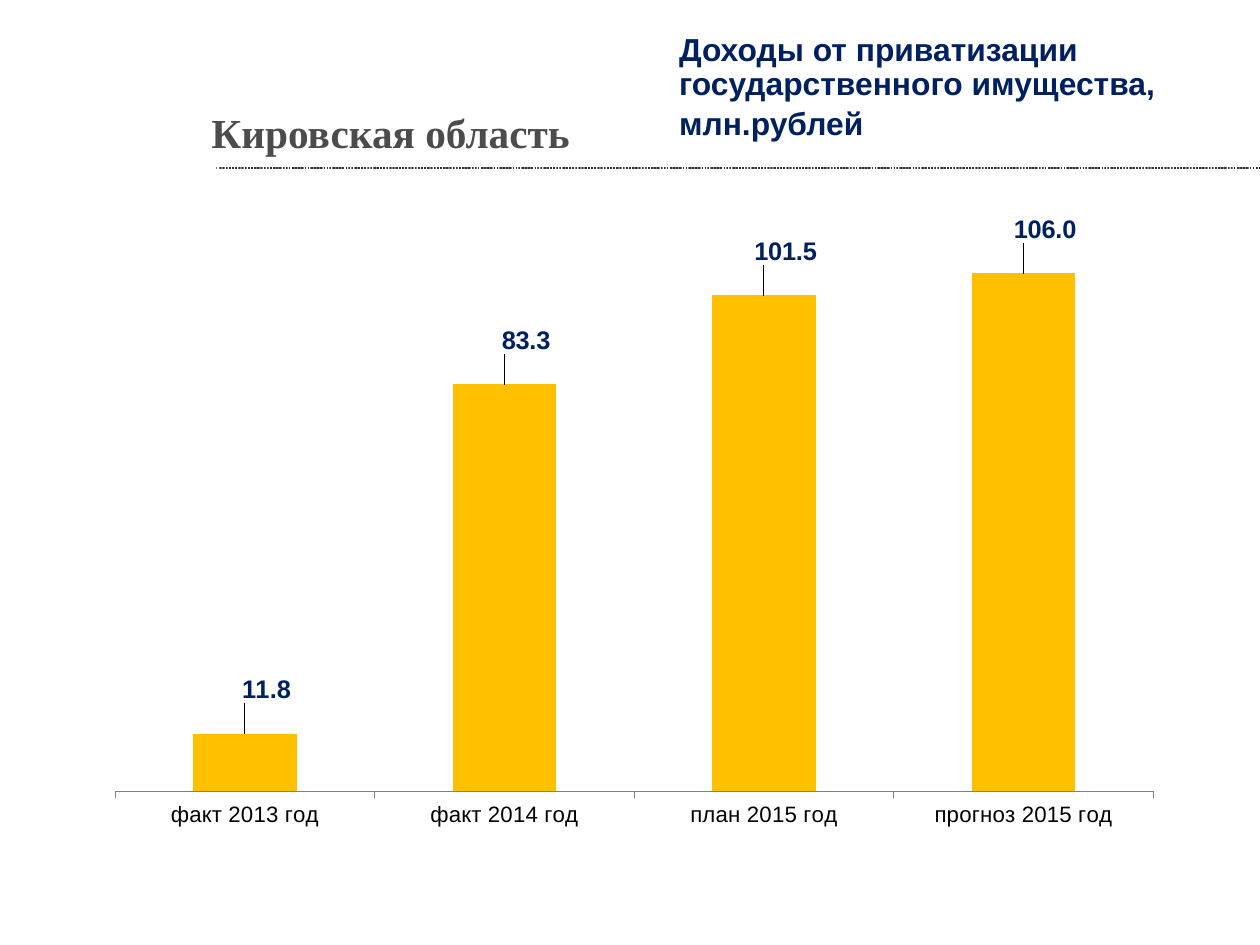
from lxml import etree
from pptx import Presentation
from pptx.chart import data
from pptx.dml import color
from pptx.enum import chart as kinds, dml, shapes, text
from pptx.oxml import ns
from pptx.util import Cm, Pt

HUES = {"navy": "002060", "gold": "FFC000", "gray": "4C4C4C", "pale": "808080",
        "dark": "333333", "black": "000000"}


def paint(font, name, size, hue, bold):
    font.name, font.size, font.bold = name, Pt(size), bold
    font.color.rgb = color.RGBColor.from_string(HUES[hue])


deck = Presentation()
deck.slide_width, deck.slide_height = Cm(28), Cm(21)
slide = deck.slides.add_slide(deck.slide_layouts[5])

box = slide.shapes.add_textbox(Cm(4.45), Cm(2.39), Cm(8.51), Cm(1.24))
box.text_frame.word_wrap = False
label = box.text_frame.paragraphs[0]
label.text = "Кировская область"
label.line_spacing = 0.9
paint(label.font, "Times New Roman", 26, "gray", True)

for left, right, hue, width in [(4.8, 27.81, "pale", 0.85), (4.88, 28, "dark", 1)]:
    rule = slide.shapes.add_connector(
        shapes.MSO_CONNECTOR.STRAIGHT, Cm(left), Cm(3.73), Cm(right), Cm(3.73))
    rule.line.color.rgb = color.RGBColor.from_string(HUES[hue])
    rule.line.width = Pt(width)
    rule.line.dash_style = dml.MSO_LINE.ROUND_DOT
    etree.SubElement(rule._element.spPr, ns.qn("a:effectLst"))

title = slide.shapes.title
title.left, title.top, title.width, title.height = Cm(15.09), Cm(0.61), Cm(12.22), Cm(2.74)
frame = title.text_frame
frame.margin_left = frame.margin_right = frame.margin_top = frame.margin_bottom = 0
frame.word_wrap = True
frame.auto_size = text.MSO_AUTO_SIZE.NONE
frame.vertical_anchor = text.MSO_ANCHOR.MIDDLE
head = frame.paragraphs[0]
head.alignment = text.PP_ALIGN.LEFT
head.line_spacing = 0.9
for words, size in [("Доходы от приватизации государственного имущества, млн.рублей", 20), (" ", 24)]:
    run = head.add_run()
    run.text = words
    paint(run.font, "Arial", size, "navy", True)

sales = data.CategoryChartData(number_format="0.0")
sales.categories = ["факт 2013 год", "факт 2014 год", "план 2015 год", "прогноз 2015 год"]
sales.add_series("Series 1", [11.8, 83.3, 101.5, 106])
chart = slide.shapes.add_chart(
    kinds.XL_CHART_TYPE.COLUMN_CLUSTERED, Cm(2.08), Cm(4.27), Cm(24.03), Cm(14.4), sales).chart
chart.has_legend = chart.has_title = False
paint(chart.font, "Arial", 18, "black", False)

years = chart.category_axis
years.major_tick_mark = kinds.XL_TICK_MARK.OUTSIDE
years.format.line.color.rgb = color.RGBColor.from_string(HUES["pale"])
paint(years.tick_labels.font, "Arial", 14, "black", False)
scale = chart.value_axis
scale.visible = scale.has_major_gridlines = False
scale.minimum_scale, scale.maximum_scale = 0, 120
scale.tick_labels.number_format = "0.0"
scale.tick_labels.number_format_is_linked = False

plot = chart.plots[0]
plot.gap_width = 150
plot.vary_by_categories = False
bars = plot.series[0]
bars.format.fill.solid()
bars.format.fill.fore_color.rgb = color.RGBColor.from_string(HUES["gold"])
tags = bars.data_labels
tags.show_value = True
tags.number_format, tags.number_format_is_linked = "0.0", False
paint(tags.font, "Arial", 16, "navy", True)
for spot in range(4):
    tag = bars.points[spot].data_label
    tag.position = kinds.XL_LABEL_POSITION.OUTSIDE_END
    paint(tag.font, "Arial", 16, "navy", True)


def place(parent, index, **marks):
    layout = parent.find(ns.qn("c:layout"))
    if layout is not None:
        parent.remove(layout)
    layout = etree.Element(ns.qn("c:layout"))
    manual = etree.SubElement(layout, ns.qn("c:manualLayout"))
    for key, value in marks.items():
        etree.SubElement(manual, ns.qn("c:" + key)).set("val", str(value))
    parent.insert(index, layout)


area = chart._chartSpace.chart.plotArea
place(area, 0, layoutTarget="inner", xMode="edge", yMode="edge", x=0.02, y=0.02, w=0.96, h=0.905)
for tag in area.iter(ns.qn("c:dLbl")):
    place(tag, 1, x=0.02, y=-0.04)
    form = etree.Element(ns.qn("c:numFmt"), formatCode="0.0", sourceLinked="0")
    tag.insert(2, form)

deck.save("out.pptx")
